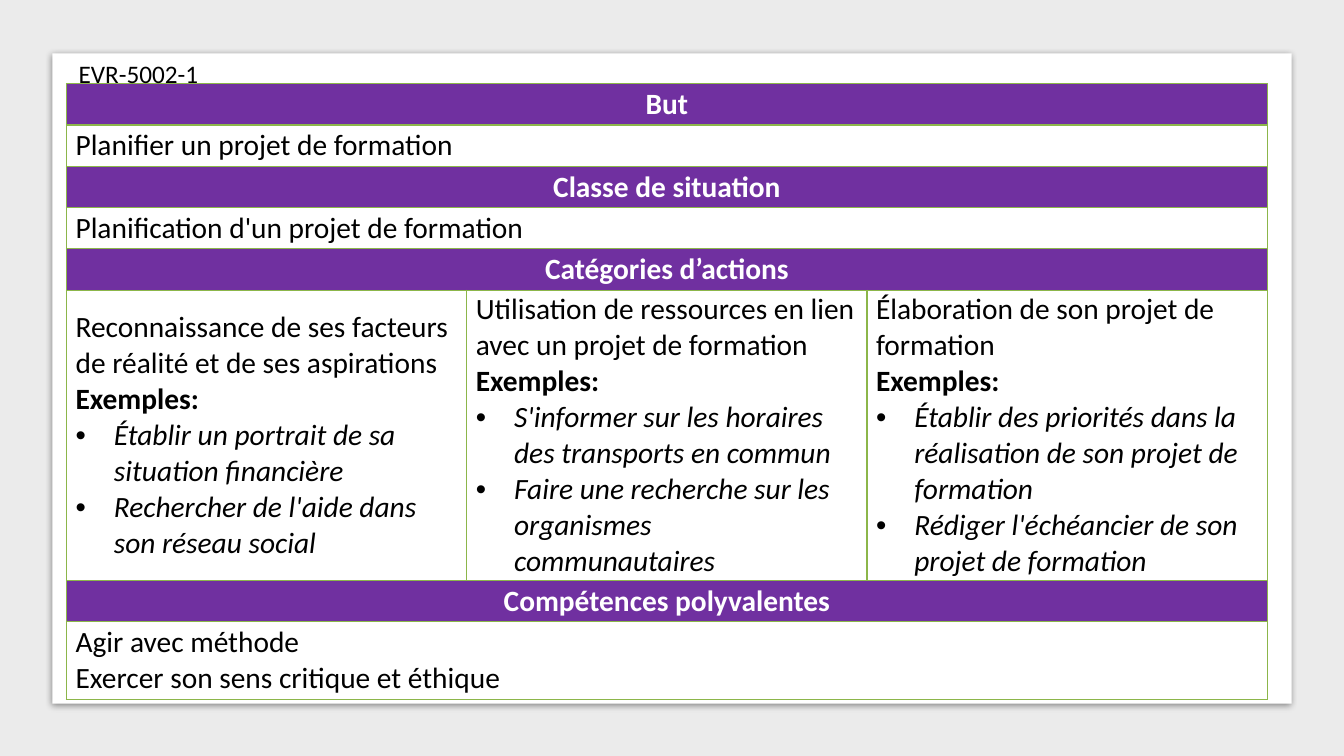
from lxml import etree
from pptx import Presentation
from pptx.dml.color import RGBColor
from pptx.enum import shapes, text
from pptx.oxml import ns
from pptx.util import Inches, Pt

CODE = "EVR-5002-1"
FONT = "Calibri"
PURPLE, GREEN, WHITE, BLACK, GREY = "7030A0", "8CB64A", "FFFFFF", "000000", "EBEBEB"
LABEL = "Exemples: "
ACTIONS = [
    ("Reconnaissance de ses facteurs de réalité et de ses aspirations",
     ["Établir un portrait de sa situation financière",
      "Rechercher de l'aide dans son réseau social"]),
    ("Utilisation de ressources en lien avec un projet de formation",
     ["S'informer sur les horaires des transports en commun",
      "Faire une recherche sur les organismes communautaires"]),
    ("Élaboration de son projet de formation",
     ["Établir des priorités dans la réalisation de son projet de formation",
      "Rédiger l'échéancier de son projet de formation"]),
]
PARTS = [
    ("But", 0.41, ["Planifier un projet de formation"]),
    ("Classe de situation", 0.41, ["Planification d'un projet de formation"]),
    ("Catégories d’actions", 2.88, ACTIONS),
    ("Compétences polyvalentes", 0.77,
     ["Agir avec méthode", "Exercer son sens critique et éthique"]),
]
HEAD, COL = 0.41, 3.97


def color(code):
    return RGBColor.from_string(code)


def node(parent, tag, **attrs):
    return etree.SubElement(parent, ns.qn("a:" + tag), attrs)


def panel(slide, box, fill):
    rect = slide.shapes.add_shape(
        shapes.MSO_SHAPE.RECTANGLE, *[Inches(n) for n in box])
    rect.fill.solid()
    rect.fill.fore_color.rgb = color(fill)
    rect.line.fill.background()
    rect.shadow.inherit = False
    return rect


def shade(rect):
    effect = rect._element.spPr.find(ns.qn("a:effectLst"))
    outer = node(effect, "outerShdw", blurRad=str(Pt(5)), dist=str(Pt(1.4)),
                 dir="5400000", algn="t", rotWithShape="0")
    node(node(outer, "srgbClr", val=BLACK), "alpha", val="43000")


def border(cell):
    props = cell._tc.get_or_add_tcPr()
    for spot, side in enumerate(("lnL", "lnR", "lnT", "lnB")):
        line = etree.Element(ns.qn("a:" + side), w=str(Pt(1)))
        node(node(line, "solidFill"), "srgbClr", val=GREEN)
        props.insert(spot, line)


def bullet(para):
    props = para._p.get_or_add_pPr()
    props.set("marL", str(Inches(0.38)))
    props.set("indent", str(-Inches(0.38)))
    node(props, "buFont", typeface="Arial")
    node(props, "buChar", char="•")


def write(cell, lines, head=False):
    frame = cell.text_frame
    for num, (words, kind) in enumerate(lines):
        para = frame.add_paragraph() if num else frame.paragraphs[0]
        para.text = words
        font = para.font
        font.name, font.size = FONT, Pt(21)
        font.bold, font.italic = kind == "bold", kind == "item"
        font.color.rgb = color(WHITE if head else BLACK)
        if head:
            para.alignment = text.PP_ALIGN.CENTER
        if kind == "item":
            bullet(para)


def fill_table(table):
    for col in table.columns:
        col.width = Inches(COL)
    for num, (name, height, body) in enumerate(PARTS):
        top, low = 2 * num, 2 * num + 1
        table.rows[top].height = Inches(HEAD)
        table.rows[low].height = Inches(height)
        for row in (top, low):
            for cell in table.rows[row].cells:
                cell.fill.solid()
                cell.fill.fore_color.rgb = color(PURPLE if row == top else WHITE)
                cell.margin_left = cell.margin_right = Inches(0.09)
                cell.margin_top = cell.margin_bottom = 0
                cell.vertical_anchor = text.MSO_ANCHOR.MIDDLE
                border(cell)
        table.cell(top, 0).merge(table.cell(top, 2))
        write(table.cell(top, 0), [(name, "bold")], head=True)
        if body is ACTIONS:
            for col, (action, items) in enumerate(body):
                lines = [(action, "plain"), (LABEL, "bold")]
                write(table.cell(low, col), lines + [(item, "item") for item in items])
        else:
            table.cell(low, 0).merge(table.cell(low, 2))
            write(table.cell(low, 0), [(line, "plain") for line in body])


def add_code(slide):
    title = slide.shapes.title
    title.left, title.top = Inches(0.68), Inches(0.53)
    title.width, title.height = Inches(1.49), Inches(0.4)
    frame = title.text_frame
    frame.text = CODE
    frame.auto_size = text.MSO_AUTO_SIZE.NONE
    frame.vertical_anchor = text.MSO_ANCHOR.TOP
    para = frame.paragraphs[0]
    para.alignment = text.PP_ALIGN.LEFT
    para.font.name, para.font.size = FONT, Pt(18)
    para.font.color.rgb = color(BLACK)
    slide.shapes._spTree.append(title._element)


def main():
    deck = Presentation()
    deck.slide_width, deck.slide_height = Inches(13.33), Inches(7.5)
    slide = deck.slides.add_slide(deck.slide_layouts[5])
    panel(slide, (0, 0, 13.33, 7.5), GREY)
    shade(panel(slide, (0.52, 0.53, 12.29, 6.45), WHITE))
    tall = sum(HEAD + part[1] for part in PARTS)
    table = slide.shapes.add_table(
        2 * len(PARTS), 3, Inches(0.66), Inches(0.83),
        Inches(3 * COL), Inches(tall)).table
    table.first_row = table.horz_banding = False
    fill_table(table)
    add_code(slide)
    deck.save("out.pptx")


if __name__ == "__main__":
    main()
